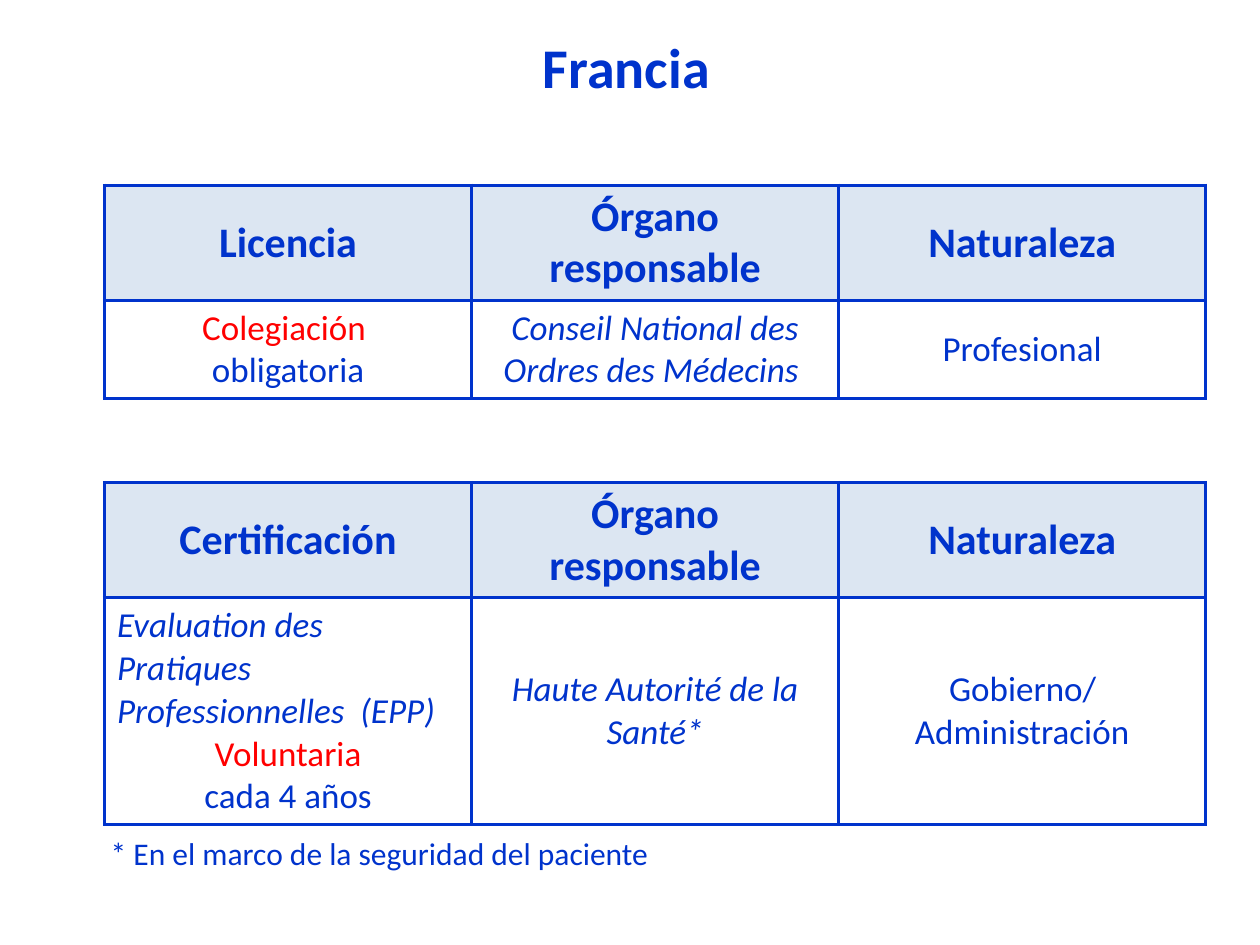
from lxml.etree import SubElement
from pptx import Presentation
from pptx.dml.color import RGBColor
from pptx.enum.text import MSO_ANCHOR, PP_ALIGN
from pptx.oxml.ns import qn
from pptx.util import Inches, Pt

COLORS = {"blue": "0033CC", "red": "FF0000", "header": "DCE6F2"}
FONT = "Calibri"


def style_run(r, size, color="blue", bold=False, italic=False):
    r.font.name = FONT
    r.font.size = Pt(size)
    r.font.bold = bold
    r.font.italic = italic
    r.font.color.rgb = RGBColor.from_string(COLORS[color])


def add_borders(cell):
    tc_pr = cell._tc.get_or_add_tcPr()
    for side in ("lnL", "lnR", "lnT", "lnB"):
        ln = SubElement(tc_pr, qn(f"a:{side}"), w=str(Pt(2.25)))
        fill = SubElement(ln, qn("a:solidFill"))
        SubElement(fill, qn("a:srgbClr"), val=COLORS["blue"])


prs = Presentation()
prs.slide_width = Inches(10)
prs.slide_height = Inches(7.5)
s = prs.slides.add_slide(prs.slide_layouts[6])

tables = [
    (1.47, 0.78, "Licencia", [
        [("Colegiación ", "red", False), ("obligatoria", "blue", False)],
        [("Conseil National des Ordres des Médecins ", "blue", True)],
        [("Profesional", "blue", False)],
    ]),
    (3.83, 1.77, "Certificación", [
        [("Evaluation des Pratiques Professionnelles  (EPP)", "blue", True),
         ("Voluntaria", "red", False), ("cada 4 años", "blue", False)],
        [("Haute Autorité de la Santé*", "blue", True)],
        [("Gobierno/Administración", "blue", False)],
    ]),
]
for top, body_height, topic, body in tables:
    heights = (0.9, body_height)
    table = s.shapes.add_table(2, 3, Inches(0.83), Inches(top),
                               Inches(8.74), Inches(sum(heights))).table
    table.first_row = False
    table.horz_banding = False
    for row, height in zip(table.rows, heights):
        row.height = Inches(height)
    header = [[(text, "blue", False)]
              for text in (topic, "Órgano responsable", "Naturaleza")]
    for i, row in enumerate((header, body)):
        for j, lines in enumerate(row):
            cell = table.cell(i, j)
            cell.vertical_anchor = MSO_ANCHOR.MIDDLE
            add_borders(cell)
            if i == 0:
                cell.fill.solid()
                cell.fill.fore_color.rgb = RGBColor.from_string(COLORS["header"])
            else:
                cell.fill.background()
            tf = cell.text_frame
            tf.text = "\n".join(text for text, _, _ in lines)
            for p, (text, color, italic) in zip(tf.paragraphs, lines):
                p.alignment = PP_ALIGN.LEFT if "EPP" in text else PP_ALIGN.CENTER
                style_run(p.runs[0], 20 if i else 24, color, i == 0, italic)

labels = [
    ("Francia", 4.21, 0.21, 1.55, 0.64, 32, True),
    ("* En el marco de la seguridad del paciente", 0.78, 6.57, 4.52, 0.4, 18, False),
]
for text, left, top, width, height, size, bold in labels:
    sp = s.shapes.add_textbox(Inches(left), Inches(top), Inches(width), Inches(height))
    tf = sp.text_frame
    tf.word_wrap = False
    tf.text = text
    style_run(tf.paragraphs[0].runs[0], size, bold=bold)

prs.save("out.pptx")
